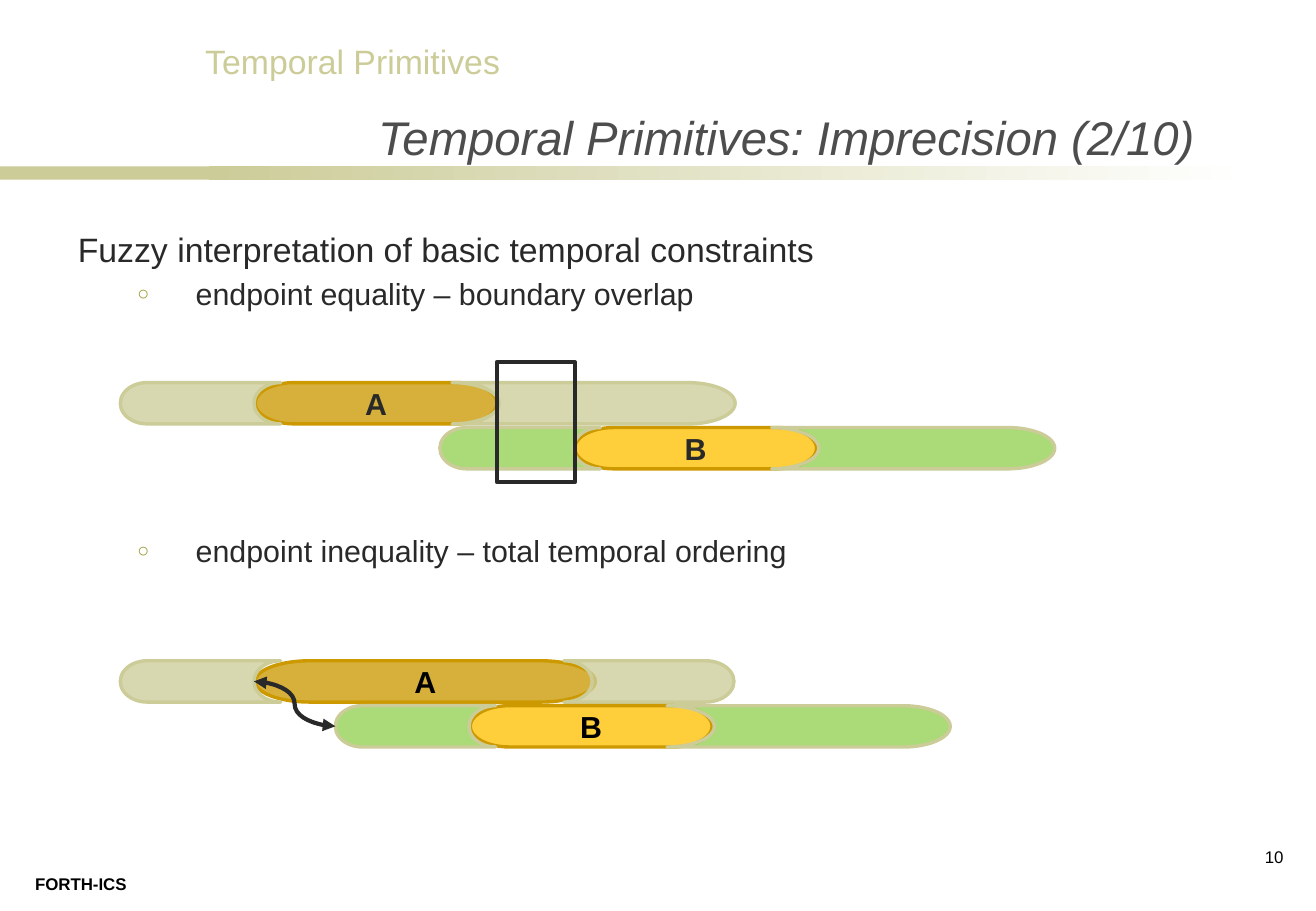
from lxml import etree
from pptx import Presentation
from pptx.dml.color import RGBColor
from pptx.enum.shapes import MSO_CONNECTOR as Link, MSO_SHAPE as Form
from pptx.enum.text import MSO_ANCHOR as Anchor, MSO_AUTO_SIZE as Auto, PP_ALIGN as Align
from pptx.oxml.ns import qn
from pptx.util import Inches, Pt

HEX = {
    "sand": "CCCC99", "white": "FFFFFF", "ink": "292929", "black": "000000",
    "grey": "4D4D4D", "olive": "999933", "gold": "CC9900", "amber": "FFC000",
    "green": "92D050",
}
RGB = {name: RGBColor.from_string(code) for name, code in HEX.items()}


def style(para, text, size, color, bold=False, italic=False):
    para.text = text
    font = para.font
    font.name, font.size = "Arial", Pt(size)
    font.bold, font.italic = bold, italic
    font.color.rgb = RGB[color]


def draw(form, box, fill=None, line=None, width=2, alpha=None):
    shape = slide.shapes.add_shape(form, *map(Inches, box))
    shape.shadow.inherit = False
    if fill:
        shape.fill.solid()
        shape.fill.fore_color.rgb = RGB[fill]
    else:
        shape.fill.background()
    if alpha:
        tint = shape.fill._xPr.find(".//" + qn("a:srgbClr"))
        etree.SubElement(tint, qn("a:alpha"), val=str(alpha * 1000))
    if line:
        shape.line.color.rgb = RGB[line]
        shape.line.width = Pt(width)
    else:
        shape.line.fill.background()
    return shape


deck = Presentation()
deck.slide_width, deck.slide_height = Inches(10.83), Inches(7.5)
slide = deck.slides.add_slide(deck.slide_layouts[1])

draw(Form.RECTANGLE, (0, 1.37, 2.53, 0.11), "sand")
fade = draw(Form.RECTANGLE, (1.72, 1.37, 8.58, 0.11), "sand")
fade.fill.gradient()
fade.fill.gradient_angle = 0
for stop, name in zip(fade.fill.gradient_stops, ("sand", "white")):
    stop.color.rgb = RGB[name]

for box, text, size, color, bold, side in (
    ((1.59, 0.29, 2.65, 0.44), "Temporal Primitives", 20, "sand", False, Align.LEFT),
    ((0.19, 7.14, 0.97, 0.27), "FORTH-ICS", 10, "black", True, Align.LEFT),
    ((10.17, 6.92, 0.49, 0.42), "10", 10, "black", False, Align.RIGHT),
):
    frame = slide.shapes.add_textbox(*map(Inches, box)).text_frame
    frame.word_wrap = side == Align.RIGHT
    para = frame.paragraphs[0]
    para.alignment = side
    style(para, text, size, color, bold)

title = slide.shapes.title
body = slide.placeholders[1]
for holder, box, anchor in (
    (title, (2.11, 0.78, 7.82, 0.63), Anchor.BOTTOM),
    (body, (0.54, 1.83, 9.75, 4.83), Anchor.TOP),
):
    holder.left, holder.top, holder.width, holder.height = map(Inches, box)
    holder.text_frame.auto_size = Auto.NONE
    holder.text_frame.vertical_anchor = anchor
head = title.text_frame.paragraphs[0]
head.alignment = Align.RIGHT
style(head, "Temporal Primitives: Imprecision (2/10)", 28, "grey", italic=True)

frame = body.text_frame
for level, text, size, gap in (
    (0, "Fuzzy interpretation of basic temporal constraints", 20, 0),
    (1, "endpoint equality – boundary overlap", 18, 4),
    (1, "endpoint inequality – total temporal ordering", 18, 130.5),
):
    para = frame.add_paragraph() if level else frame.paragraphs[0]
    para.level = level
    para.space_before = Pt(gap)
    props = para._p.get_or_add_pPr()
    props.set("marL", str(Inches(0.97 if level else 0.49)))
    props.set("indent", str(Inches(-0.48 if level else -0.49)))
    if level:
        tint = etree.SubElement(props, qn("a:buClr"))
        etree.SubElement(tint, qn("a:srgbClr"), val=HEX["olive"])
        etree.SubElement(props, qn("a:buSzPct"), val="65000")
        etree.SubElement(props, qn("a:buFont"), typeface="Arial")
        etree.SubElement(props, qn("a:buChar"), char="○")
    else:
        etree.SubElement(props, qn("a:buNone"))
    style(para, text, size, "ink")

tall = 0.34
for name, left, top, wide, end, core, edge, ink in (
    ("A", 2.1, 3.15, 1.99, (3.72, 2.33), "gold", "sand", "ink"),
    ("B", 4.73, 3.52, 1.99, (6.35, 2.33), "amber", "green", "ink"),
    ("A", 2.1, 5.44, 2.8, (4.64, 1.4), "gold", "sand", "black"),
    ("B", 3.87, 5.81, 1.99, (5.49, 2.33), "amber", "green", "black"),
):
    pill = draw(Form.FLOWCHART_TERMINATOR, (left, top, wide, tall), core, "gold", alpha=77)
    frame = pill.text_frame
    frame.margin_top = frame.margin_bottom = 0
    frame.vertical_anchor = Anchor.MIDDLE
    frame.paragraphs[0].alignment = Align.CENTER
    style(frame.paragraphs[0], name, 18, ink, True)
    for x, width, turn in ((left - 1.11, 1.32, 0), (*end, 180)):
        cap = draw(Form.FLOWCHART_STORED_DATA, (x, top, width, tall), edge, "sand", alpha=77)
        cap.rotation = turn

draw(Form.RECTANGLE, (4.09, 2.98, 0.64, 0.99), line="ink", width=2.5)

curve = slide.shapes.add_connector(Link.CURVE, *map(Inches, (2.09, 5.61, 2.76, 5.98)))
curve.line.color.rgb = RGB["ink"]
curve.line.width = Pt(2.5)
for tip in ("a:headEnd", "a:tailEnd"):
    etree.SubElement(curve.line._get_or_add_ln(), qn(tip), type="triangle")
etree.SubElement(curve._element.spPr, qn("a:effectLst"))

deck.save("out.pptx")
